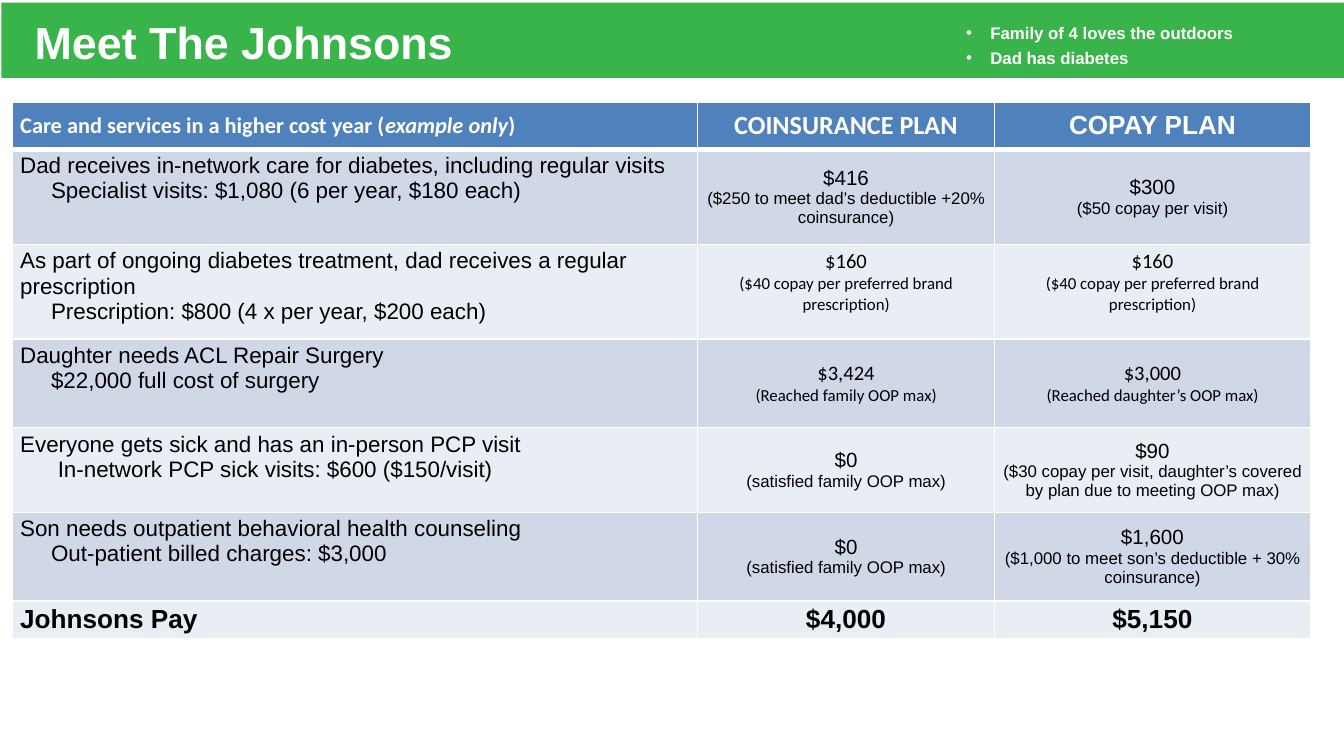
"""Build a slide comparing a family's yearly costs under two health plans."""
from lxml import etree
from pptx import Presentation
from pptx.dml.color import RGBColor
from pptx.enum import shapes, text
from pptx.oxml import ns
from pptx.util import Inches, Pt

COLORS = {"green": "39B44A", "header": "4F81BD", "dark_band": "D0D8E8",
          "light_band": "E9EDF4", "white": "FFFFFF", "black": "000000"}
TITLE = "Meet The Johnsons"
FACTS = ["Family of 4 loves the outdoors", "Dad has diabetes"]
HEADER_PARTS = [("Care and services in a higher cost year (", False),
                ("example only", True), (")", False)]
PLANS = [("COINSURANCE PLAN", "Calibri"), ("COPAY PLAN", "Arial")]
PREFERRED = ("$160", "($40 copay per preferred brand prescription)")
SATISFIED = ("$0", "(satisfied family OOP max)")
SERVICES = [
    {"care": "Dad receives in-network care for diabetes, including regular visits",
     "detail": "Specialist visits: $1,080 (6 per year, $180 each)",
     "costs": [("$416", "($250 to meet dad’s deductible +20% coinsurance)"),
               ("$300", "($50 copay per visit)")]},
    {"care": "As part of ongoing diabetes treatment, dad receives a regular prescription",
     "detail": "Prescription: $800 (4 x per year, $200 each)",
     "costs": [PREFERRED, PREFERRED], "font": "Calibri", "bottom": 0.18},
    {"care": "Daughter needs ACL Repair Surgery",
     "detail": "$22,000 full cost of surgery",
     "costs": [("$3,424", "(Reached family OOP max)"),
               ("$3,000", "(Reached daughter’s OOP max)")], "font": "Calibri"},
    {"care": "Everyone gets sick and has an in-person PCP visit",
     "detail": "In-network PCP sick visits: $600 ($150/visit)", "indent": 0.28,
     "costs": [SATISFIED,
               ("$90", "($30 copay per visit, daughter’s covered by plan due to meeting OOP max)")]},
    {"care": "Son needs outpatient behavioral health counseling",
     "detail": "Out-patient billed charges: $3,000",
     "costs": [SATISFIED,
               ("$1,600", "($1,000 to meet son’s deductible + 30% coinsurance)")]},
]
TOTALS = ["Johnsons Pay", "$4,000", "$5,150"]
COLUMN_WIDTHS = [5.1, 2.21, 2.35]
ROW_HEIGHTS = [0.35, 0.71, 0.69, 0.66, 0.63, 0.66, 0.27]


def rgb(name):
    return RGBColor.from_string(COLORS[name])


def add_text(frame, content, size=12, font="Arial", color="black", bold=False, italic=False,
             centered=False, indent=0, bullet=False, spacing=None, after=None, same_line=False):
    paragraph = frame.paragraphs[-1]
    if paragraph.runs and not same_line:
        paragraph = frame.add_paragraph()
    properties = paragraph._p.get_or_add_pPr()
    if indent:
        properties.set("marL", str(Inches(indent)))
    if bullet:
        properties.set("indent", str(-Inches(indent)))
        etree.SubElement(properties, ns.qn("a:buFont")).set("typeface", "Arial")
        etree.SubElement(properties, ns.qn("a:buChar")).set("char", "•")
    if centered:
        paragraph.alignment = text.PP_ALIGN.CENTER
    if spacing:
        paragraph.line_spacing = spacing
    if after:
        paragraph.space_after = Pt(after)
    run = paragraph.add_run()
    run.text = content
    run.font.size, run.font.name = Pt(size), font
    run.font.bold, run.font.italic = bold, italic
    run.font.color.rgb = rgb(color)


def add_text_box(slide, left, top, width, height):
    box = slide.shapes.add_textbox(*map(Inches, (left, top, width, height)))
    box.text_frame.word_wrap = True
    return box.text_frame


def style_cell(cell, fill, bottom_line=1, middle=True, bottom=0.03):
    properties = cell._tc.get_or_add_tcPr()
    for side, width in (("L", 1), ("R", 1), ("T", 1), ("B", bottom_line)):
        line = etree.SubElement(properties, ns.qn(f"a:ln{side}"), w=str(Pt(width)))
        solid = etree.SubElement(line, ns.qn("a:solidFill"))
        etree.SubElement(solid, ns.qn("a:srgbClr"), val=COLORS["white"])
    cell.fill.solid()
    cell.fill.fore_color.rgb = rgb(fill)
    cell.margin_left = cell.margin_right = Inches(0.06)
    cell.margin_top, cell.margin_bottom = Inches(0.03), Inches(bottom)
    cell.vertical_anchor = text.MSO_ANCHOR.MIDDLE if middle else text.MSO_ANCHOR.TOP
    return cell.text_frame


def add_banner(slide):
    banner = slide.shapes.add_shape(shapes.MSO_SHAPE.RECTANGLE, Inches(0.01), Inches(0.02),
                                    Inches(9.99), Inches(0.56))
    banner.shadow.inherit = False
    banner.fill.solid()
    banner.fill.fore_color.rgb = rgb("green")
    banner.line.fill.background()
    add_text(add_text_box(slide, 0.16, 0.14, 4.66, 1.13), TITLE, size=24, color="white",
             bold=True, spacing=0.8)
    facts = add_text_box(slide, 7.09, 0.12, 2.38, 0.44)
    for fact in FACTS:
        add_text(facts, fact, size=9, color="white", bold=True, indent=0.18, bullet=True, after=2.5)


def add_cost_table(slide):
    table = slide.shapes.add_table(
        len(ROW_HEIGHTS), len(COLUMN_WIDTHS), Inches(0.09), Inches(0.76),
        Inches(sum(COLUMN_WIDTHS)), Inches(sum(ROW_HEIGHTS))).table
    table.first_row = table.horz_banding = False
    for column, width in zip(table.columns, COLUMN_WIDTHS):
        column.width = Inches(width)
    for row, height in zip(table.rows, ROW_HEIGHTS):
        row.height = Inches(height)

    heading = style_cell(table.cell(0, 0), "header", bottom_line=3)
    for part, italic in HEADER_PARTS:
        add_text(heading, part, font="Calibri", color="white", bold=True, italic=italic, same_line=True)
    for column, (plan, font) in enumerate(PLANS, 1):
        add_text(style_cell(table.cell(0, column), "header", bottom_line=3), plan, size=14,
                 font=font, color="white", bold=True, centered=True)

    for row, service in enumerate(SERVICES, 1):
        fill = "dark_band" if row % 2 else "light_band"
        care = style_cell(table.cell(row, 0), fill, middle=False)
        add_text(care, service["care"])
        add_text(care, service["detail"], indent=service.get("indent", 0.23))
        for column, (cost, note) in enumerate(service["costs"], 1):
            frame = style_cell(table.cell(row, column), fill, bottom=service.get("bottom", 0.03))
            for content, size in ((cost, 11), (note, 9)):
                add_text(frame, content, size=size, font=service.get("font", "Arial"), centered=True)

    for column, total in enumerate(TOTALS):
        frame = style_cell(table.cell(len(ROW_HEIGHTS) - 1, column), "light_band", middle=column > 0)
        add_text(frame, total, size=14, bold=True, centered=column > 0)


def main():
    presentation = Presentation()
    presentation.slide_width = Inches(10)
    presentation.slide_height = Inches(10 * 9 / 16)
    slide = presentation.slides.add_slide(presentation.slide_layouts[6])
    add_cost_table(slide)
    add_banner(slide)
    presentation.save("out.pptx")


if __name__ == "__main__":
    main()
